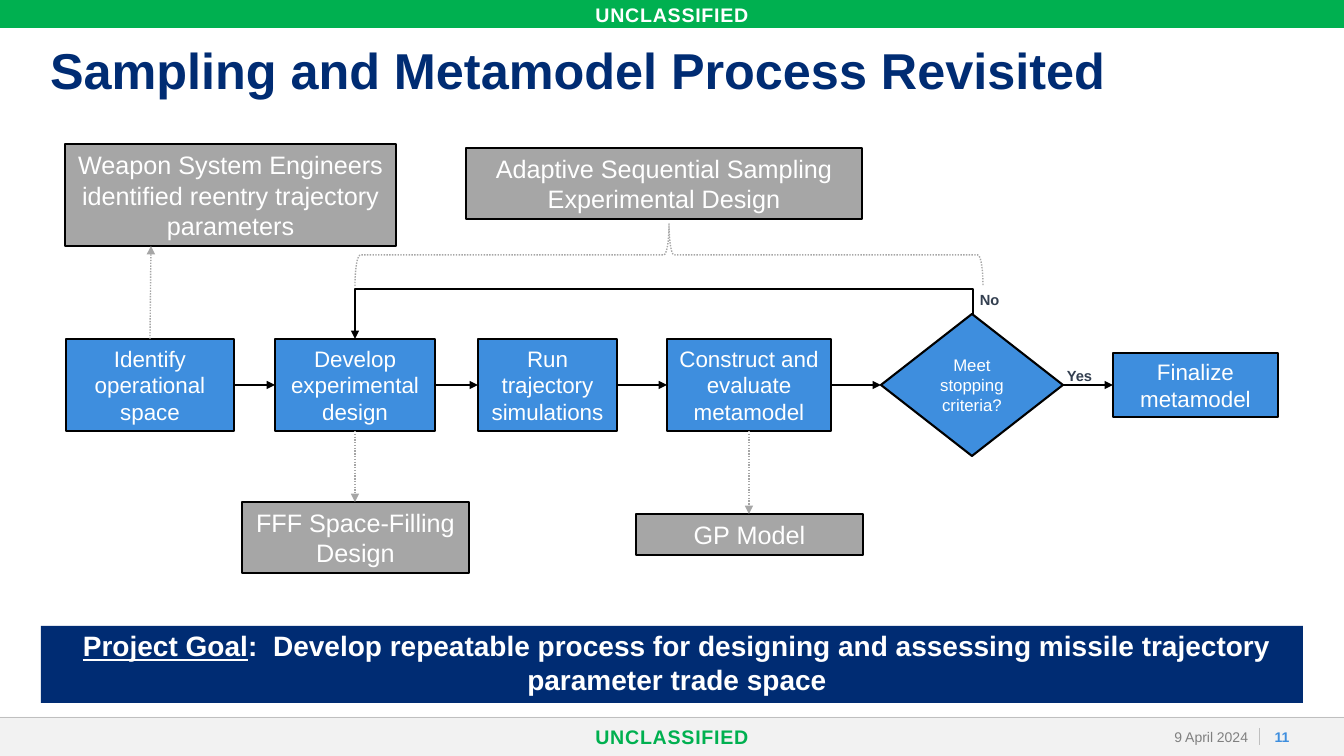
from lxml import etree
from pptx import Presentation
from pptx.dml.color import RGBColor
from pptx.enum.dml import MSO_LINE
from pptx.enum.shapes import MSO_CONNECTOR, MSO_SHAPE
from pptx.enum.text import MSO_ANCHOR, MSO_AUTO_SIZE, PP_ALIGN
from pptx.oxml.ns import qn
from pptx.util import Pt

PX = 914400 / 100.8
W, H = 1344, 756
FONT = "Arial"
HEX = {"navy": "002C73", "blue": "3E8EDE", "green": "00B050", "gray": "A6A6A6",
       "pale": "F2F2F2", "rule": "BFBFBF", "date": "808080", "slate": "333F50",
       "black": "000000", "white": "FFFFFF"}
RECT, DIAMOND, BRACE = MSO_SHAPE.RECTANGLE, MSO_SHAPE.DIAMOND, MSO_SHAPE.LEFT_BRACE
STRAIGHT, ELBOW = MSO_CONNECTOR.STRAIGHT, MSO_CONNECTOR.ELBOW
LEFT, CENTER, RIGHT = PP_ALIGN.LEFT, PP_ALIGN.CENTER, PP_ALIGN.RIGHT
TOP, MIDDLE = MSO_ANCHOR.TOP, MSO_ANCHOR.MIDDLE
DOT = MSO_LINE.ROUND_DOT


def emu(*vals):
    return [round(v * PX) for v in vals]


def rgb(name):
    return RGBColor.from_string(HEX[name])


def style(item, size, color, bold=False, align=CENTER, anchor=MIDDLE,
          pad=(10, 5, 10, 5), wrap=True, track=0):
    """Format the text frame and runs; pad is left, top, right, bottom."""
    frame = item.text_frame
    frame.auto_size = MSO_AUTO_SIZE.NONE
    frame.word_wrap = wrap
    frame.vertical_anchor = anchor
    (frame.margin_left, frame.margin_top,
     frame.margin_right, frame.margin_bottom) = emu(*pad)
    for para in frame.paragraphs:
        para.alignment = align
        for run in para.runs:
            font = run.font
            font.name, font.size, font.bold = FONT, Pt(size), bold
            font.color.rgb = rgb(color)
            if track:
                run.font._element.set("spc", str(track))


def label(slide, box, text, size, color, **opts):
    item = slide.shapes.add_textbox(*emu(*box))
    item.text_frame.text = text
    style(item, size, color, **opts)


def block(slide, box, fill, text="", size=16, edge=True, kind=RECT, **opts):
    item = slide.shapes.add_shape(kind, *emu(*box))
    item.shadow.inherit = False
    item.fill.solid()
    item.fill.fore_color.rgb = rgb(fill)
    if edge:
        item.line.color.rgb = rgb("black")
        item.line.width = Pt(1.5)
    else:
        item.line.fill.background()
    if text:
        item.text_frame.text = text
        style(item, size, "white", **opts)
    return item


def link(slide, ends, color="black", width=1, dash=None, head=True, kind=STRAIGHT):
    line = slide.shapes.add_connector(kind, *emu(*ends))
    line.line.color.rgb = rgb(color)
    line.line.width = Pt(width)
    if dash:
        line.line.dash_style = dash
    props = line._element.spPr
    if head:
        etree.SubElement(props.find(qn("a:ln")), qn("a:tailEnd"), type="triangle")
    etree.SubElement(props, qn("a:effectLst"))
    return line


def loop(slide, start, end):
    """Draw an elbow that rises from start, runs left and drops to end."""
    (x1, y1), (x2, y2) = start, end
    mid_x, mid_y = (x1 + x2) / 2, (y1 + y2) / 2
    dx, dy = (y2 - y1) / 2, (x1 - x2) / 2
    line = link(slide, (mid_x + dx, mid_y + dy, mid_x - dx, mid_y - dy), kind=ELBOW)
    props = line._element.spPr
    props.find(qn("a:xfrm")).set("rot", "16200000")
    guides = props.find(qn("a:prstGeom")).find(qn("a:avLst"))
    etree.SubElement(guides, qn("a:gd"), name="adj1", fmla="val -99700")


def banner(slide, x, y, w, h):
    block(slide, (x, y, w, h), "green", "UNCLASSIFIED", 14, edge=False,
          bold=True, pad=(10, 8, 10, 5), track=50)


def footer(slide, x, y, w, h):
    block(slide, (x, y, w, h), "pale", edge=False)
    link(slide, (x, y, x + w, y), "rule", 0.5, head=False)
    link(slide, (x + 1259, y + 11, x + 1259, y + 28), "rule", 0.5, head=False)
    label(slide, (x + 445, y, 454, h), "UNCLASSIFIED", 14, "green",
          bold=True, track=50)
    label(slide, (x + 1107, y, 151, h), "9 April 2024", 10, "date",
          align=RIGHT, pad=(10, 0, 10, 0))
    label(slide, (x + 1261, y, 42, h), "11", 10, "blue", bold=True, pad=(0, 0, 0, 0))


def heading(slide, *box):
    title = slide.shapes.title
    title.left, title.top, title.width, title.height = emu(*box)
    title.text_frame.text = "Sampling and Metamodel Process Revisited"
    style(title, 36, "navy", bold=True, align=LEFT, anchor=TOP, pad=(0, 0, 0, 0))
    title.text_frame.paragraphs[0].line_spacing = 0.9


def flow(slide, x, y, w, h):
    mid = y + 96
    steps = [(0, 168, 92, RECT, 16, "Identify operational space"),
             (209, 160, 92, RECT, 16, "Develop experimental design"),
             (412, 139, 92, RECT, 16, "Run trajectory simulations"),
             (601, 164, 92, RECT, 16, "Construct and evaluate metamodel"),
             (815, 182, 142, DIAMOND, 12, "Meet stopping criteria?"),
             (w - 165, 165, 64, RECT, 16, "Finalize metamodel")]
    for left, wide, tall, kind, size, text in steps:
        block(slide, (x + left, mid - tall / 2, wide, tall), "blue", text, size, kind=kind)
    for step, after in zip(steps, steps[1:]):
        link(slide, (x + step[0] + step[1], mid, x + after[0], mid))
    loop(slide, (x + 907, y + 25), (x + 289, mid - 46))
    for left, top, text in [(991, 72, "Yes"), (904, -4, "No")]:
        label(slide, (x + left, y + top, 48, 29), text, 10.5, "slate",
              bold=True, align=LEFT, wrap=False)


def notes(slide, x, y):
    """Place the gray remarks and their dotted links around the flow."""
    remarks = [(0, 0, 331, 102, "Weapon System Engineers identified reentry trajectory parameters"),
               (401, 4, 396, 71, "Adaptive Sequential Sampling Experimental Design"),
               (177, 358, 227, 71, "FFF Space-Filling Design"),
               (571, 370, 227, 41, "GP Model")]
    for left, top, wide, tall, text in remarks:
        block(slide, (x + left, y + top, wide, tall), "gray", text, 18)
    for x1, y1, x2, y2 in [(85, 195, 86, 102), (290, 287, 290, 358), (684, 287, 684, 370)]:
        link(slide, (x + x1, y + y1, x + x2, y + y2), "gray", dash=DOT)
    brace = slide.shapes.add_shape(BRACE, *emu(x + 573, y - 203, 62, 628))
    brace.rotation = 90
    brace.shadow.inherit = False
    brace.fill.background()
    brace.line.color.rgb = rgb("gray")
    brace.line.width = Pt(1)
    brace.line.dash_style = DOT


def goal(slide, *box):
    item = block(slide, box, "navy", edge=False)
    para = item.text_frame.paragraphs[0]
    for text in ("Project Goal", ":  Develop repeatable process for designing and "
                 "assessing missile trajectory parameter trade space"):
        para.add_run().text = text
    style(item, 20, "white", bold=True, anchor=TOP, pad=(10, 3, 0, 0))
    para.runs[0].font.underline = True


def main():
    deck = Presentation()
    deck.slide_width, deck.slide_height = emu(W, H)
    slide = deck.slides.add_slide(deck.slide_layouts[5])
    footer(slide, 0, 717, W, 39)
    banner(slide, 0, -1, W, 29)
    heading(slide, 50, 46, 1243, 84)
    flow(slide, 66, 289, 1212, 167)
    goal(slide, 41, 626, 1262, 77)
    notes(slide, 65, 144)
    deck.save("out.pptx")


if __name__ == "__main__":
    main()
